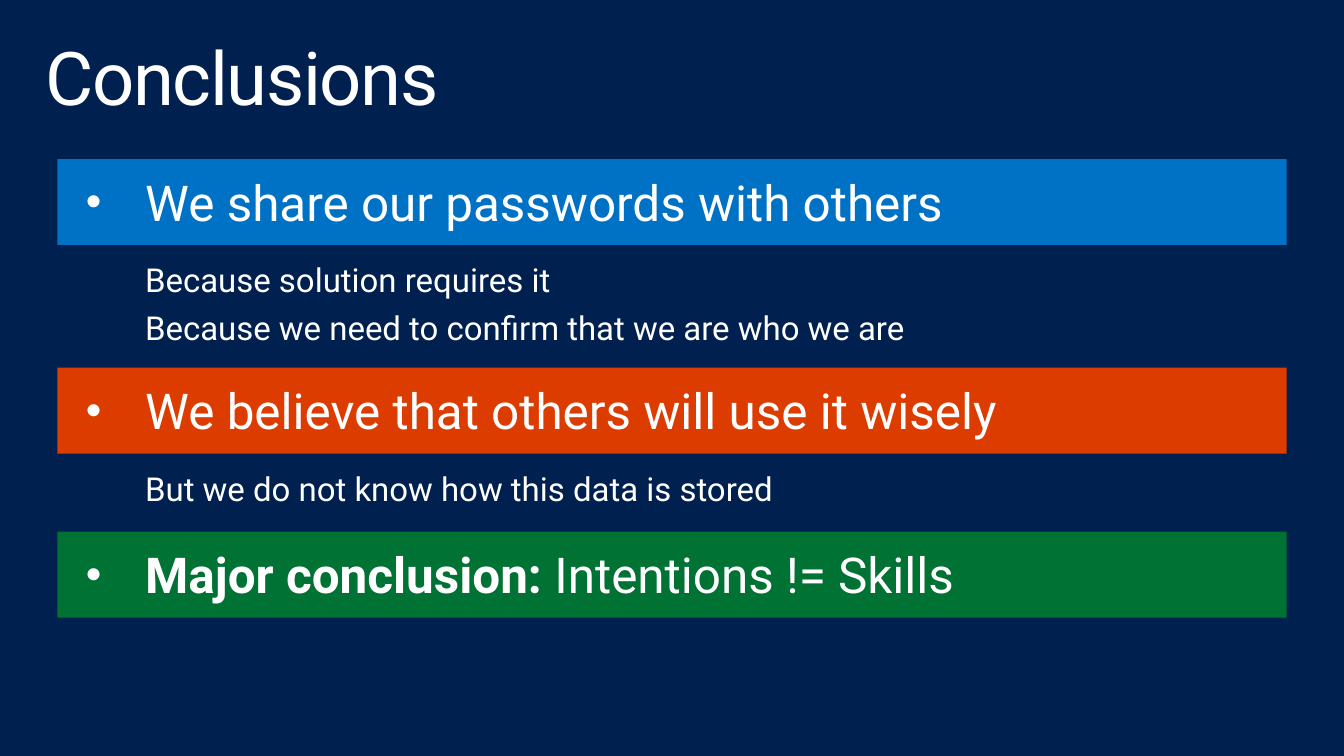
"""Build the Conclusions slide: three coloured banners with supporting lines."""
from lxml import etree
from pptx import Presentation
from pptx.dml.color import RGBColor
from pptx.enum.shapes import MSO_SHAPE
from pptx.enum.text import MSO_AUTO_SIZE
from pptx.oxml.ns import qn
from pptx.util import Inches, Pt

RECT = MSO_SHAPE.RECTANGLE
GROW = MSO_AUTO_SIZE.SHAPE_TO_FIT_TEXT
NAVY = RGBColor(0x00, 0x20, 0x50)
BLUE = RGBColor(0x00, 0x72, 0xC6)
ORANGE = RGBColor(0xDC, 0x3C, 0x00)
GREEN = RGBColor(0x00, 0x72, 0x33)
WHITE = RGBColor(0xFF, 0xFF, 0xFF)
FONT = "Roboto"

TITLE = "Conclusions"
SECTIONS = [
    (1.61, BLUE, "", "We share our passwords with others",
     ["Because solution requires it",
      "Because we need to confirm that we are who we are"]),
    (3.72, ORANGE, "", "We believe that others will use it wisely",
     ["But we do not know how this data is stored"]),
    (5.38, GREEN, "Major conclusion:", " Intentions != Skills", []),
]
BANNER_LEFT, BANNER_W, BANNER_H = 0.58, 12.44, 0.87
PAD_X, PAD_Y = 0.07, 0.08
DETAIL_LEFT, DETAIL_W, DETAIL_LINE, DETAIL_GAP = 1.35, 11.81, 0.5, 0.1


def add_text(shapes, box, paragraphs, size, insets=(0.1, 0.05), indent=(0, 0),
             before=None, line=None, spacing=None, bullet=None, grow=True):
    """Add a text box; each paragraph is a list of (text, bold) runs."""
    tf = shapes.add_textbox(*map(Inches, box)).text_frame
    tf.word_wrap = True
    if grow:
        tf.auto_size = GROW
    tf.margin_left = Inches(insets[0])
    tf.margin_top = tf.margin_bottom = Inches(insets[1])
    for i, runs in enumerate(paragraphs):
        p = tf.paragraphs[0] if i == 0 else tf.add_paragraph()
        p.line_spacing = line
        p.space_before = before
        pPr = p._p.get_or_add_pPr()
        pPr.set("marL", str(Inches(indent[0])))
        pPr.set("indent", str(Inches(indent[1])))
        if bullet:
            etree.SubElement(pPr, qn("a:buSzPct")).set("val", "90000")
            etree.SubElement(pPr, qn("a:buFont")).set("typeface", "Arial")
            etree.SubElement(pPr, qn("a:buChar")).set("char", bullet)
        for text, bold in runs:
            r = p.add_run()
            r.text = text
            r.font.name, r.font.size, r.font.bold = FONT, Pt(size), bold
            r.font.color.rgb = WHITE
            if spacing:
                r._r.get_or_add_rPr().set("spc", str(spacing))


def add_banner(s, top, color, lead, text):
    """Add a grouped colour bar with its bulleted heading."""
    shapes = s.shapes.add_group_shape().shapes
    sp = shapes.add_shape(RECT, *map(Inches, (BANNER_LEFT, top, BANNER_W, BANNER_H)))
    sp.shadow.inherit = False
    sp.fill.solid()
    sp.fill.fore_color.rgb = color
    sp.line.fill.background()
    box = (BANNER_LEFT + PAD_X, top + PAD_Y,
           BANNER_W - 2 * PAD_X, BANNER_H - 2 * PAD_Y)
    runs = [(t, b) for t, b in ((lead, True), (text, False)) if t]
    add_text(shapes, box, [runs], 36, insets=(0.2, 0.05), indent=(0.62, -0.6),
             before=Pt(6.1), bullet="•")


def main():
    """Assemble and save the slide."""
    prs = Presentation()
    prs.slide_width, prs.slide_height = Inches(13.6), Inches(7.65)
    s = prs.slides.add_slide(prs.slide_layouts[6])
    s.background.fill.solid()
    s.background.fill.fore_color.rgb = NAVY
    add_text(s.shapes, (0.3, 0.32, 13, 1), [[(TITLE, False)]], 54,
             insets=(0.16, 0.1), line=0.9, spacing=-100, grow=False)
    for top, color, lead, text, details in SECTIONS:
        add_banner(s, top, color, lead, text)
        if details:
            box = (DETAIL_LEFT, top + BANNER_H + DETAIL_GAP,
                   DETAIL_W, DETAIL_LINE * len(details))
            add_text(s.shapes, box, [[(d, False)] for d in details], 24,
                     indent=(0.02, 0), before=Pt(6.1))
    prs.save("out.pptx")


if __name__ == "__main__":
    main()
